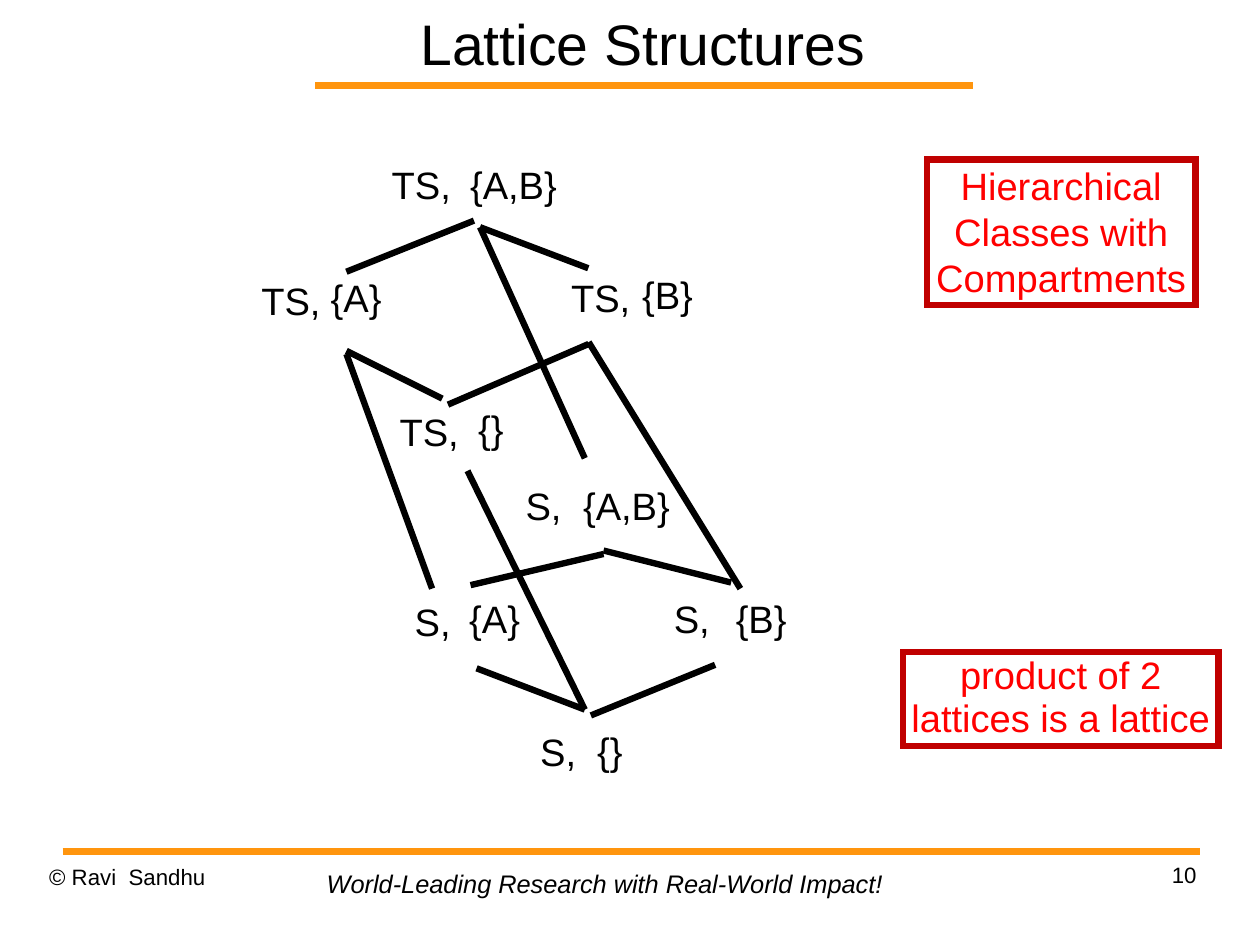
from dataclasses import dataclass

from lxml import etree
from pptx import Presentation
from pptx.dml.color import RGBColor
from pptx.enum.shapes import MSO_CONNECTOR, MSO_SHAPE
from pptx.enum.text import MSO_ANCHOR, MSO_AUTO_SIZE, PP_ALIGN
from pptx.oxml.ns import qn
from pptx.util import Pt

LEFT, CENTER, RIGHT = PP_ALIGN.LEFT, PP_ALIGN.CENTER, PP_ALIGN.RIGHT
TOP, MIDDLE = MSO_ANCHOR.TOP, MSO_ANCHOR.MIDDLE
GROW, FIXED = MSO_AUTO_SIZE.SHAPE_TO_FIT_TEXT, MSO_AUTO_SIZE.NONE
STRAIGHT, RECTANGLE = MSO_CONNECTOR.STRAIGHT, MSO_SHAPE.RECTANGLE

FONT = "Arial"
COLORS = {"rule": "FF950E", "text": "000000", "edge": "000000",
          "panel_line": "C00000", "panel_text": "FF0000"}
LABEL_HEIGHT = 33.1
LABEL_WIDTHS = {"TS,": 51.1, "S,": 36.7, "{A,B}": 74.2,
                "{A}": 50.4, "{B}": 50.4, "{}": 32.4}
LABEL_INSETS = (5, 2)


@dataclass
class Style:
    size: float
    color: str = "text"
    align: PP_ALIGN = LEFT
    anchor: MSO_ANCHOR = TOP
    spacing: float = 1.0
    insets: tuple[float, float] = (0, 0)
    wrap: bool = True
    grow: bool = False
    italic: bool = False


@dataclass
class Caption:
    text: str
    box: tuple[float, float, float, float]
    style: Style


@dataclass
class Panel:
    lines: list[str]
    box: tuple[float, float, float, float]
    style: Style


@dataclass
class Node:
    """A lattice class: its level and its compartments, each at its own place."""
    level: str
    level_at: tuple[float, float]
    compartments: str
    compartments_at: tuple[float, float]


@dataclass
class Line:
    start: tuple[float, float]
    end: tuple[float, float]


LABEL = Style(24, align=CENTER, spacing=0.87, insets=LABEL_INSETS,
              wrap=False, grow=True)

RULES = [Line((198.7, 54), (612.7, 54)), Line((39.5, 536.2), (755.8, 536.2))]

CAPTIONS = [
    Caption("© Ravi  Sandhu", (31, 543.4, 185, 41), Style(14, spacing=1.01)),
    Caption("10", (568.8, 542.2, 185, 41), Style(14, align=RIGHT, spacing=1.01)),
    Caption("World-Leading Research with Real-World Impact!",
            (198.7, 543.6, 365.8, 26.6),
            Style(16, insets=(7.2, 3.6), wrap=False, grow=True, italic=True)),
    Caption("Lattice Structures", (173.3, 0, 463, 54),
            Style(36, align=CENTER, anchor=MIDDLE)),
]

PANELS = [
    Panel(["Hierarchical", "Classes with", "Compartments"],
          (583.8, 100.6, 169.2, 91.4),
          Style(24, "panel_text", CENTER, insets=LABEL_INSETS,
                wrap=False, grow=True)),
    Panel(["product of 2 lattices is a lattice"], (568.8, 410.9, 198.7, 59),
          Style(24, "panel_text", CENTER, spacing=0.94, insets=LABEL_INSETS,
                grow=True)),
]

NODES = [
    Node("TS,", (239.8, 103.7), "{A,B}", (286.4, 103.7)),
    Node("TS,", (157.7, 176.9), "{A}", (199.2, 174.8)),
    Node("TS,", (352.8, 174.8), "{B}", (395.3, 172.8)),
    Node("TS,", (244.8, 259), "{}", (293, 257.6)),
    Node("S,", (324, 305.8), "{A,B}", (357.6, 305.8)),
    Node("S,", (254.2, 378.7), "{A}", (286.4, 377.1)),
    Node("S,", (417.4, 377.1), "{B}", (454.3, 377.1)),
    Node("S,", (333.2, 460.6), "{}", (367.9, 460)),
]

EDGES = [
    Line((218.2, 171.2), (298.6, 139)),
    Line((302.4, 143.1), (370.6, 169)),
    Line((218.2, 221), (278.6, 251.1)),
    Line((282.2, 254.9), (370.8, 216.7)),
    Line((380.2, 349), (296.4, 368.6)),
    Line((300.2, 421), (368.4, 447)),
    Line((372.2, 450.7), (450.5, 418.8)),
    Line((380.2, 346.8), (460.6, 367)),
    Line((218.2, 223), (272.2, 370.8)),
    Line((294.5, 296.6), (368.4, 447)),
    Line((466.4, 370.8), (370.8, 215.5)),
    Line((302.4, 143.1), (368.4, 288.7)),
]


def rgb(name: str) -> RGBColor:
    return RGBColor.from_string(COLORS[name])


def write_text(sp, lines: list[str], style: Style) -> None:
    tf = sp.text_frame
    tf.word_wrap = style.wrap
    tf.auto_size = GROW if style.grow else FIXED
    tf.vertical_anchor = style.anchor
    side, edge = style.insets
    tf.margin_left = tf.margin_right = Pt(side)
    tf.margin_top = tf.margin_bottom = Pt(edge)
    for i, line in enumerate(lines):
        p = tf.add_paragraph() if i else tf.paragraphs[0]
        p.alignment = style.align
        p.line_spacing = style.spacing
        r = p.add_run()
        r.text = line
        r.font.name = FONT
        r.font.size = Pt(style.size)
        r.font.italic = style.italic
        r.font.color.rgb = rgb(style.color)


def draw_caption(s, caption: Caption) -> None:
    sp = s.shapes.add_textbox(*map(Pt, caption.box))
    write_text(sp, [caption.text], caption.style)


def draw_panel(s, panel: Panel) -> None:
    sp = s.shapes.add_shape(RECTANGLE, *map(Pt, panel.box))
    sp.shadow.inherit = False
    sp.fill.background()
    sp.line.color.rgb = rgb("panel_line")
    sp.line.width = Pt(4)
    ln = sp._element.spPr.find(qn("a:ln"))
    etree.SubElement(ln, qn("a:miter"), lim="800000")
    write_text(sp, panel.lines, panel.style)


def draw_node(s, node: Node) -> None:
    for text, at in ((node.level, node.level_at),
                     (node.compartments, node.compartments_at)):
        box = (*at, LABEL_WIDTHS[text], LABEL_HEIGHT)
        draw_caption(s, Caption(text, box, LABEL))


def draw_line(s, line: Line, color: str, width: float) -> None:
    cxn = s.shapes.add_connector(STRAIGHT, *map(Pt, line.start + line.end))
    cxn.line.color.rgb = rgb(color)
    cxn.line.width = Pt(width)
    etree.SubElement(cxn._element.spPr, qn("a:effectLst"))


def main() -> None:
    prs = Presentation()
    prs.slide_width, prs.slide_height = Pt(793.7), Pt(595.28)
    s = prs.slides.add_slide(prs.slide_layouts[6])
    for rule in RULES:
        draw_line(s, rule, "rule", 4.31)
    for caption in CAPTIONS:
        draw_caption(s, caption)
    for panel in PANELS:
        draw_panel(s, panel)
    for node in NODES:
        draw_node(s, node)
    for edge in EDGES:
        draw_line(s, edge, "edge", 4)
    prs.save("out.pptx")


if __name__ == "__main__":
    main()
